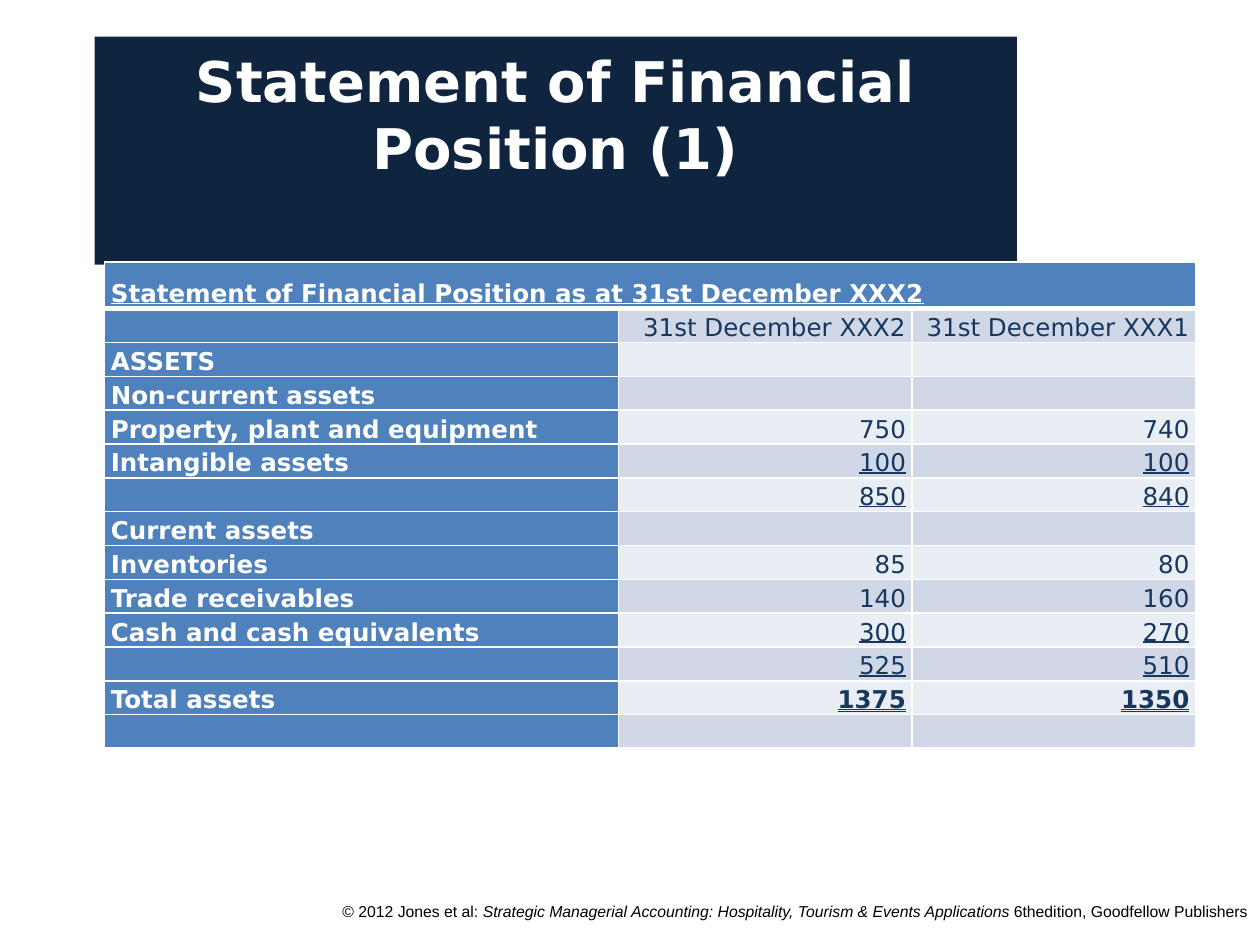
import pptx
import pptx.util
import pptx.dml.color
import pptx.enum.text
import pptx.oxml
import pptx.oxml.ns
import lxml.etree

Inches = pptx.util.Inches
Pt = pptx.util.Pt
RGBColor = pptx.dml.color.RGBColor
ALIGN = pptx.enum.text.PP_ALIGN
ANCHOR = pptx.enum.text.MSO_ANCHOR
UNDERLINE = pptx.enum.text.MSO_UNDERLINE

NAVY = RGBColor(0x0F, 0x24, 0x3E)
BLUE = RGBColor(0x4F, 0x81, 0xBD)
INK = RGBColor(0x17, 0x37, 0x5E)
BAND_DARK = RGBColor(0xD0, 0xD8, 0xE8)
BAND_LIGHT = RGBColor(0xE9, 0xED, 0xF4)
WHITE = RGBColor(0xFF, 0xFF, 0xFF)
BLACK = RGBColor(0, 0, 0)

HEADING = "Statement of Financial Position as at 31st December XXX2"
PLAIN = {}
SUM = {"underline": True}
TOTAL = {"underline": UNDERLINE.DOUBLE_LINE, "bold": True}
ROWS = [
    ("", "31st December XXX2", "31st December XXX1", PLAIN),
    ("ASSETS", "", "", PLAIN),
    ("Non-current assets", "", "", PLAIN),
    ("Property, plant and equipment", "750", "740", PLAIN),
    ("Intangible assets", "100", "100", SUM),
    ("", "850", "840", SUM),
    ("Current assets", "", "", PLAIN),
    ("Inventories", "85", "80", PLAIN),
    ("Trade receivables", "140", "160", PLAIN),
    ("Cash and cash equivalents", "300", "270", SUM),
    ("", "525", "510", SUM),
    ("Total assets", "1375", "1350", TOTAL),
    ("", "", "", PLAIN),
]


def add_text(p, text, font="DejaVu Sans", size=14, color=INK, bold=False,
             italic=False, underline=False, align=ALIGN.LEFT, spacing=None):
    p.alignment = align
    if spacing:
        p.line_spacing = spacing
    if not text:
        end = lxml.etree.SubElement(p._p, pptx.oxml.ns.qn("a:endParaRPr"))
        end.set("sz", str(size * 100))
        lxml.etree.SubElement(end, pptx.oxml.ns.qn("a:latin")).set("typeface", font)
        return
    r = p.add_run()
    r.text = text
    r.font.name = font
    r.font.size = Pt(size)
    r.font.color.rgb = color
    r.font.bold = bold
    r.font.italic = italic
    r.font.underline = underline


class Deck:
    def __init__(self):
        self.prs = pptx.Presentation()
        self.prs.slide_width = Inches(10)
        self.prs.slide_height = Inches(7.5)
        self.s = self.prs.slides.add_slide(self.prs.slide_layouts[5])

    def title(self, text, left, top, width, height):
        sp = self.s.shapes.title
        sp.left, sp.top = Inches(left), Inches(top)
        sp.width, sp.height = Inches(width), Inches(height)
        sp.fill.solid()
        sp.fill.fore_color.rgb = NAVY
        tf = sp.text_frame
        tf.auto_size = pptx.enum.text.MSO_AUTO_SIZE.NONE
        tf.vertical_anchor = ANCHOR.TOP
        tf.margin_top = Inches(0.08)
        add_text(tf.paragraphs[0], text, size=32, color=WHITE, bold=True, align=ALIGN.CENTER)

    def footer(self, parts, left, top, width, height):
        sp = self.s.shapes.add_textbox(Inches(left), Inches(top), Inches(width), Inches(height))
        tf = sp.text_frame
        tf.word_wrap = True
        for text, italic in parts:
            add_text(tf.paragraphs[0], text, font="Arial", size=9, color=BLACK,
                     italic=italic, align=ALIGN.RIGHT)

    def borders(self, cell, top=1, bottom=1):
        tcPr = cell._tc.get_or_add_tcPr()
        widths = {"lnL": 1, "lnR": 1, "lnT": top, "lnB": bottom}
        for i, (side, width) in enumerate(widths.items()):
            tcPr.insert(i, pptx.oxml.parse_xml(
                f'<a:{side} {pptx.oxml.ns.nsdecls("a")} w="{Pt(width)}">'
                f'<a:solidFill><a:srgbClr val="{WHITE}"/></a:solidFill></a:{side}>'))

    def cell(self, cell, text, fill, top=1, bottom=1, **fmt):
        cell.margin_left = cell.margin_right = Inches(0.05)
        cell.margin_top = cell.margin_bottom = 0
        cell.vertical_anchor = ANCHOR.BOTTOM
        cell.fill.solid()
        cell.fill.fore_color.rgb = fill
        self.borders(cell, top, bottom)
        add_text(cell.text_frame.paragraphs[0], text, spacing=1.15, **fmt)

    def table(self, heading, rows, left, top, widths, heading_height, row_height):
        height = heading_height + row_height * len(rows)
        frame = self.s.shapes.add_table(len(rows) + 1, len(widths), Inches(left), Inches(top),
                                        Inches(sum(widths)), Inches(height))
        table = frame.table
        for col, width in zip(table.columns, widths):
            col.width = Inches(width)
        for row in table.rows:
            row.height = Inches(row_height)
        table.rows[0].height = Inches(heading_height)
        label = {"color": WHITE, "bold": True}
        for c in range(len(widths)):
            self.cell(table.cell(0, c), "" if c else heading, BLUE, bottom=3,
                      underline=True, **label)
        table.cell(0, 0).merge(table.cell(0, len(widths) - 1))
        for n, (name, *values, fmt) in enumerate(rows, 1):
            edge = 3 if n == 1 else 1
            self.cell(table.cell(n, 0), name, BLUE, top=edge, **label)
            band = BAND_DARK if n % 2 else BAND_LIGHT
            for c, value in enumerate(values, 1):
                self.cell(table.cell(n, c), value, band, top=edge, align=ALIGN.RIGHT, **fmt)


def main():
    deck = Deck()
    deck.footer([
        ("© 2012 Jones et al: ", False),
        ("Strategic Managerial Accounting: Hospitality, Tourism & Events Applications ", True),
        ("6thedition, Goodfellow Publishers", False),
    ], 2.23, 7.11, 7.77, 0.39)
    deck.title("Statement of Financial Position (1)", 0.75, 0.29, 7.32, 1.81)
    deck.table(HEADING, ROWS, 0.83, 2.08, [4.08, 2.33, 2.25], 0.37, 0.26)
    deck.prs.save("out.pptx")


if __name__ == "__main__":
    main()
